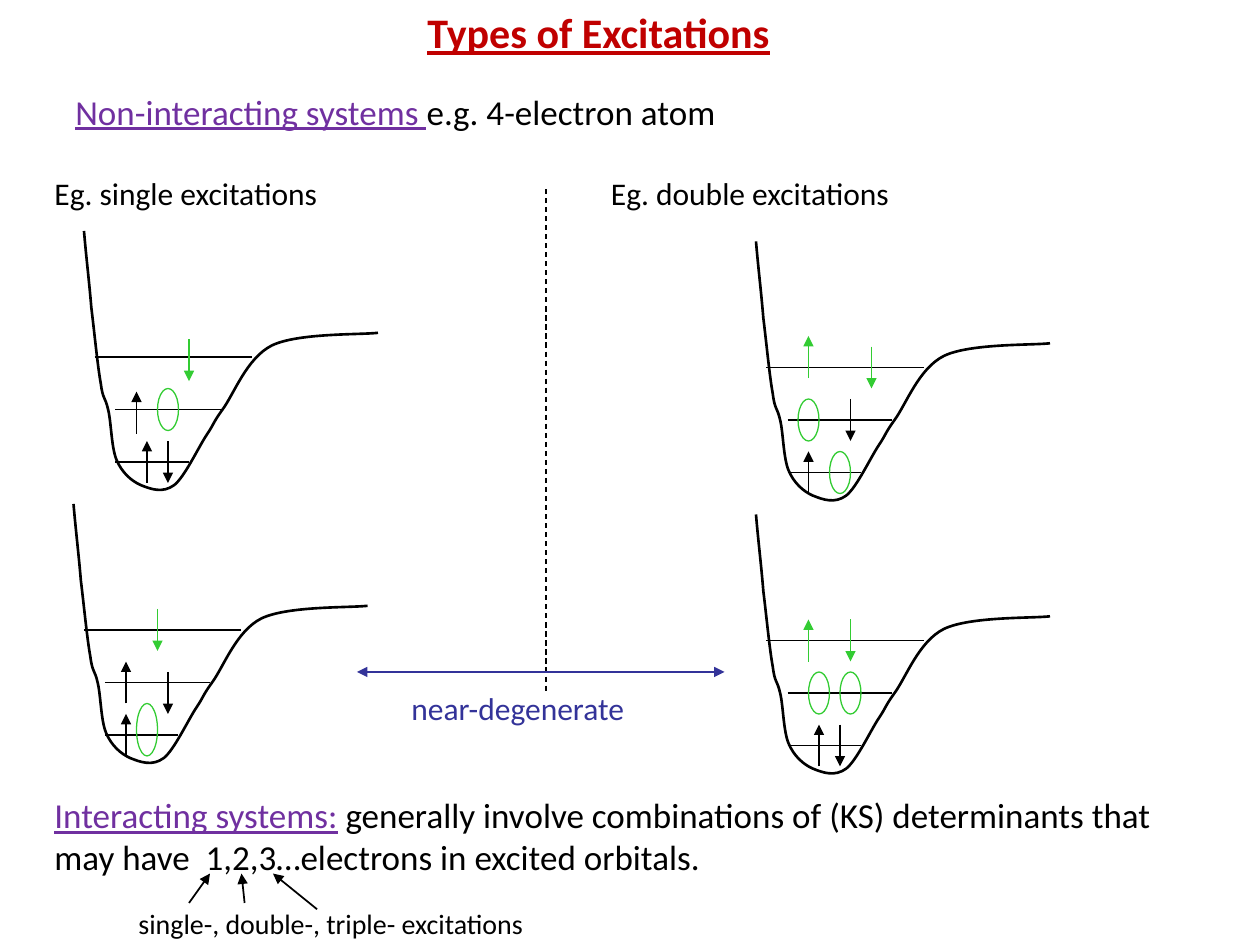
from dataclasses import dataclass

from pptx import Presentation
from pptx.dml.color import RGBColor
from pptx.enum.dml import MSO_LINE
from pptx.enum.shapes import MSO_CONNECTOR as CONN, MSO_SHAPE as SHAPE
from pptx.enum.text import MSO_ANCHOR, MSO_AUTO_SIZE, PP_ALIGN
from pptx.oxml import parse_xml
from pptx.oxml.ns import qn
from pptx.util import Pt
from lxml.etree import SubElement

PX = 7620


@dataclass(frozen=True)
class Theme:
    font: str = "Calibri"
    black: str = "000000"
    title: str = "C00000"
    term: str = "7030A0"
    excited: str = "33CC33"
    note: str = "333399"
    title_pt: int = 24
    body_pt: int = 20
    label_pt: int = 18
    small_pt: int = 16
    thin: float = 0.75
    pointer: float = 1
    curve: float = 1.5


T = Theme()

WELL_CURVE = [
    (2, 24), (5, 48), (7, 73), (10, 97), (13, 129), (16, 145),
    (18, 161), (20, 157), (23, 170), (26, 182), (26, 206), (31, 218),
    (36, 230), (45, 238), (54, 242), (64, 246), (75, 250), (86, 242),
    (96, 234), (109, 206), (117, 194), (125, 182), (122, 184), (132, 170),
    (143, 155), (155, 121), (179, 109), (204, 97), (263, 99), (280, 97),
]
LEVELS = [(30, 100, 220), (10, 160, 120), (30, 130, 170)]
SPIN_LENGTH = 40
HOLE_WIDTH = 20

UP, DOWN = True, False
# Each state: well origin, spins (x, top, direction, colour), holes (left, top, height)
STATES = [
    ((80, 220),
     [(60, 200, UP, T.black), (80, 200, DOWN, T.black),
      (50, 153, UP, T.black), (100, 103, DOWN, T.excited)],
     [(70, 150, 40)]),
    ((720, 230),
     [(50, 200, UP, T.black), (50, 90, UP, T.excited),
      (90, 150, DOWN, T.black), (110, 100, DOWN, T.excited)],
     [(40, 150, 40), (70, 200, 40)]),
    ((720, 490),
     [(60, 200, UP, T.black), (80, 200, DOWN, T.black),
      (50, 100, UP, T.excited), (90, 100, DOWN, T.excited)],
     [(50, 150, 40), (80, 150, 40)]),
    ((70, 480),
     [(50, 200, UP, T.black), (50, 150, UP, T.black),
      (90, 160, DOWN, T.black), (80, 100, DOWN, T.excited)],
     [(60, 190, 50)]),
]


def px(*lengths):
    return [n * PX for n in lengths]


def style_line(line, color, width):
    line.color.rgb = RGBColor.from_string(color)
    line.width = Pt(width)


def add_line(shapes, start, end, color=T.black, width=T.thin, ends=(), dash=None):
    c = shapes.add_connector(CONN.STRAIGHT, *px(*start, *end))
    style_line(c.line, color, width)
    if dash:
        c.line.dash_style = dash
    spPr = c._element.spPr
    for end_tag in ends:
        SubElement(spPr.get_or_add_ln(), qn(end_tag)).set("type", "triangle")
    SubElement(spPr, qn("a:effectLst"))
    return c


def add_arrow(shapes, start, end, color=T.black, width=T.thin):
    return add_line(shapes, start, end, color, width, ["a:tailEnd"])


def style_run(r, size, color, underline=False, bold=False):
    f = r.font
    f.name, f.size, f.bold, f.underline = T.font, Pt(size), bold, underline
    f.color.rgb = RGBColor.from_string(color)


def add_label(shapes, box, size, text, color=T.black, term=""):
    tf = shapes.add_textbox(*px(*box)).text_frame
    tf.word_wrap = True
    tf.auto_size = MSO_AUTO_SIZE.SHAPE_TO_FIT_TEXT
    p = tf.paragraphs[0]
    if term:
        r = p.add_run()
        r.text = term
        style_run(r, size, T.term, underline=True)
    r = p.add_run()
    r.text = text
    style_run(r, size, color)


def set_title(sp, box, text):
    sp.left, sp.top, sp.width, sp.height = px(*box)
    tf = sp.text_frame
    tf.text = text
    tf.word_wrap = True
    tf.vertical_anchor = MSO_ANCHOR.TOP
    p = tf.paragraphs[0]
    p.alignment = PP_ALIGN.CENTER
    style_run(p.runs[0], T.title_pt, T.title, underline=True, bold=True)


def outline_only(sp, color, width):
    sp.shadow.inherit = False
    sp.fill.background()
    style_line(sp.line, color, width)


def curve_segments(sp):
    path = next(sp._element.iter(qn("a:path")))
    corners = path.findall(qn("a:lnTo"))
    for i in range(0, len(corners), 3):
        bezier = SubElement(path, qn("a:cubicBezTo"))
        for corner in corners[i:i + 3]:
            bezier.append(corner[0])
            path.remove(corner)


def add_well(shapes, x, y):
    well = shapes.add_group_shape().shapes
    builder = well.build_freeform(0, 0, scale=PX)
    builder.add_line_segments(WELL_CURVE, close=False)
    sp = builder.convert_to_shape(*px(x, y))
    curve_segments(sp)
    outline_only(sp, T.black, T.curve)
    for left, right, level in LEVELS:
        add_line(well, (x + left, y + level), (x + right, y + level))


def add_state(shapes, origin, spins, holes):
    x, y = origin
    add_well(shapes, x, y)
    for dx, dy, up, color in spins:
        top, bottom = (x + dx, y + dy), (x + dx, y + dy + SPIN_LENGTH)
        start, end = (bottom, top) if up else (top, bottom)
        add_arrow(shapes, start, end, color)
    for dx, dy, height in holes:
        sp = shapes.add_shape(SHAPE.OVAL, *px(x + dx, y + dy, HOLE_WIDTH, height))
        outline_only(sp, T.excited, T.thin)


def main():
    prs = Presentation()
    prs.slide_width, prs.slide_height = px(1200, 900)
    s = prs.slides.add_slide(prs.slide_layouts[5])
    shapes = s.shapes

    set_title(shapes.title, (110, 0, 920, 60), "Types of Excitations")
    add_label(shapes, (60, 80, 1040, 52), T.body_pt, "e.g. 4-electron atom",
              term="Non-interacting systems ")
    add_label(shapes, (40, 160, 340, 48), T.label_pt, "Eg. single excitations")
    add_label(shapes, (570, 160, 380, 48), T.label_pt, "Eg. double excitations")

    for state in STATES:
        add_state(shapes, *state)

    add_line(shapes, (520, 180), (520, 660), dash=MSO_LINE.DASH)
    add_line(shapes, (340, 640), (690, 640), T.note, ends=["a:headEnd", "a:tailEnd"])
    add_label(shapes, (380, 650, 270, 48), T.label_pt, "near-degenerate", T.note)

    add_label(shapes, (40, 750, 1120, 92), T.body_pt,
              " generally involve combinations of (KS) determinants that "
              "may have  1,2,3…electrons in excited orbitals.",
              term="Interacting systems:")
    add_label(shapes, (120, 857, 469, 44), T.small_pt,
              "single-, double-, triple- excitations")
    for start, end in [((180, 860), (200, 832)), ((233, 860), (230, 832)),
                       ((302, 866), (260, 832))]:
        add_arrow(shapes, start, end, width=T.pointer)

    prs.save("out.pptx")


if __name__ == "__main__":
    main()
